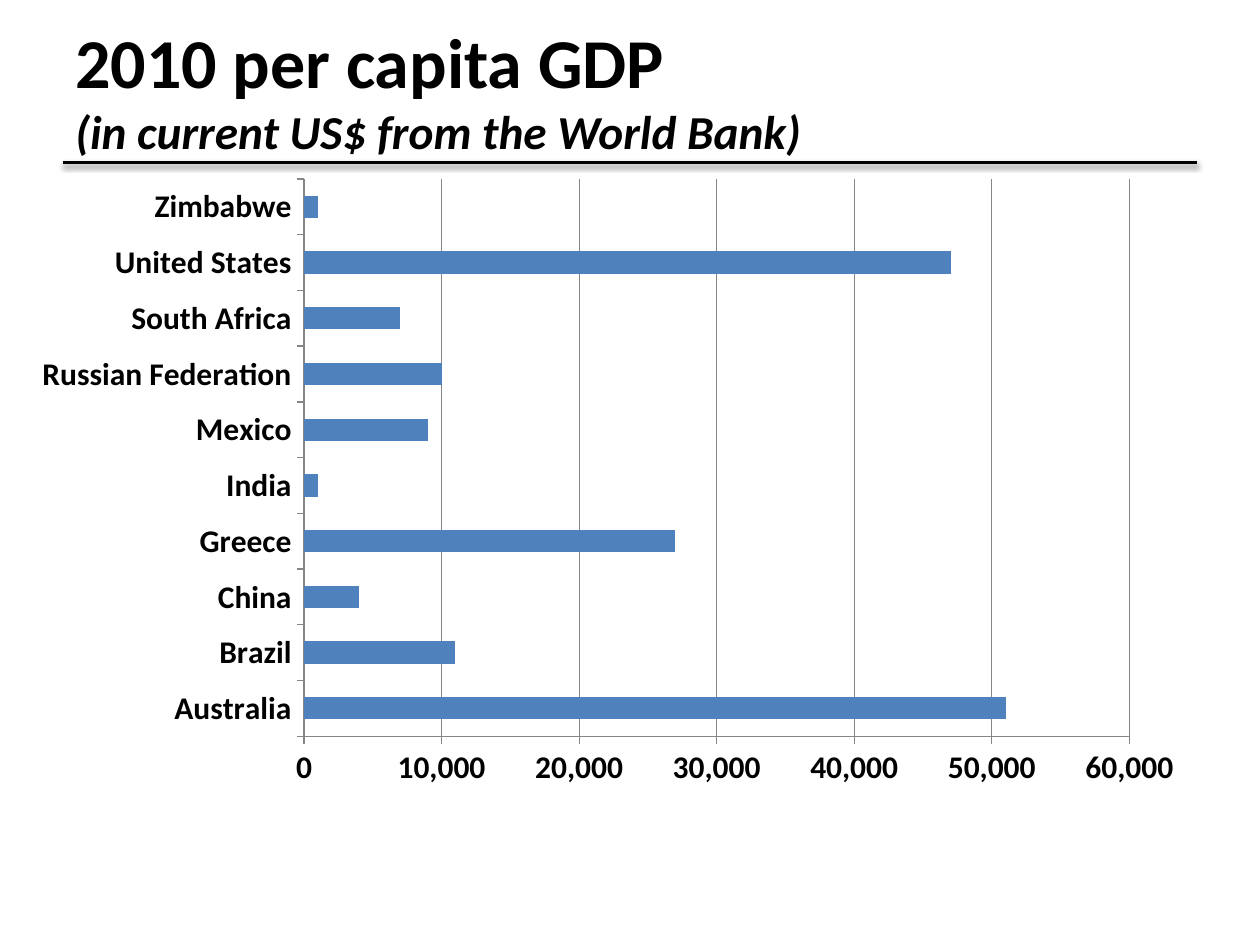
from typing import NamedTuple

from lxml import etree
from pptx import Presentation
from pptx.chart.data import CategoryChartData
from pptx.dml.color import RGBColor
from pptx.enum.chart import XL_CHART_TYPE, XL_TICK_MARK
from pptx.enum.shapes import MSO_CONNECTOR
from pptx.enum.text import MSO_ANCHOR
from pptx.oxml import parse_xml
from pptx.oxml.ns import nsdecls
from pptx.util import Inches, Pt

BAR_CLUSTERED = XL_CHART_TYPE.BAR_CLUSTERED
TICK_OUTSIDE = XL_TICK_MARK.OUTSIDE
STRAIGHT = MSO_CONNECTOR.STRAIGHT
MIDDLE = MSO_ANCHOR.MIDDLE

WIDTH, HEIGHT = Inches(10), Inches(7.5)
MARGIN = 0.05  # share of the slide's width
FONT = "Calibri"
BLACK, BAR_BLUE, AXIS_GRAY = "000000", "4F81BD", "868686"


class Country(NamedTuple):
    name: str
    gdp_per_capita: int


class TitleLine(NamedTuple):
    text: str
    size: float
    italic: bool


COUNTRIES = [
    Country("Australia", 51000),
    Country("Brazil", 11000),
    Country("China", 4000),
    Country("Greece", 27000),
    Country("India", 1000),
    Country("Mexico", 9000),
    Country("Russian Federation", 10000),
    Country("South Africa", 7000),
    Country("United States", 47000),
    Country("Zimbabwe", 1000),
]
TITLE_LINES = [
    TitleLine("2010 per capita GDP ", 40, False),
    TitleLine("(in current US$ from the World Bank)", 27, True),
]


def color(hex_code: str) -> RGBColor:
    return RGBColor.from_string(hex_code)


def across(share: float) -> int:
    return round(WIDTH * share)


def down(share: float) -> int:
    return round(HEIGHT * share)


def style_font(font, size: float, italic: bool = False) -> None:
    font.name, font.size = FONT, Pt(size)
    font.bold, font.italic = True, italic
    font.color.rgb = color(BLACK)


def draw_title(slide) -> None:
    title = slide.shapes.add_textbox(
        across(MARGIN), down(0.01), across(1 - 2 * MARGIN), down(0.167))
    frame = title.text_frame
    frame.word_wrap = True
    frame.vertical_anchor = MIDDLE
    frame.text = "\v".join(line.text for line in TITLE_LINES)
    for run, line in zip(frame.paragraphs[0].runs, TITLE_LINES):
        style_font(run.font, line.size, line.italic)


def draw_title_rule(slide) -> None:
    y = down(0.172)
    rule = slide.shapes.add_connector(
        STRAIGHT, across(MARGIN), y, across(1 - MARGIN), y)
    rule.line.color.rgb = color(BLACK)
    rule.line.width = Pt(2)
    # Soft shadow falling straight down
    effects = parse_xml(
        f'<a:effectLst {nsdecls("a")}>'
        f'<a:outerShdw blurRad="{Pt(3.1)}" dist="{Pt(1.6)}" dir="5400000" rotWithShape="0">'
        f'<a:srgbClr val="{BLACK}"><a:alpha val="38000"/></a:srgbClr>'
        '</a:outerShdw></a:effectLst>')
    etree.ElementBase.append(rule._element.spPr, effects)


def style_axis(axis) -> None:
    axis.major_tick_mark = TICK_OUTSIDE
    axis.format.line.color.rgb = color(AXIS_GRAY)
    axis.format.line.width = Pt(0.75)


def draw_gdp_chart(slide) -> None:
    data = CategoryChartData()
    data.categories = [country.name for country in COUNTRIES]
    data.add_series("Series 1", [country.gdp_per_capita for country in COUNTRIES])
    chart = slide.shapes.add_chart(
        BAR_CLUSTERED, across(0.015), down(0.176), across(0.935), down(0.67), data).chart
    chart.has_legend = chart.has_title = False
    style_font(chart.font, 18)

    # Bars
    plot = chart.plots[0]
    plot.gap_width = 150
    plot.vary_by_categories = False
    fill = plot.series[0].format.fill
    fill.solid()
    fill.fore_color.rgb = color(BAR_BLUE)

    # Axes and gridlines
    style_axis(chart.category_axis)
    dollars = chart.value_axis
    style_axis(dollars)
    dollars.minimum_scale, dollars.maximum_scale = 0, 60000
    dollars.major_unit = 10000
    dollars.tick_labels.number_format = "#,##0"
    dollars.tick_labels.number_format_is_linked = False
    dollars.has_major_gridlines = True
    gridline = dollars.major_gridlines.format.line
    gridline.color.rgb = color(AXIS_GRAY)
    gridline.width = Pt(0.75)


def main() -> None:
    deck = Presentation()
    deck.slide_width, deck.slide_height = WIDTH, HEIGHT
    slide = deck.slides.add_slide(deck.slide_layouts[6])
    draw_title_rule(slide)
    draw_title(slide)
    draw_gdp_chart(slide)
    deck.save("out.pptx")


if __name__ == "__main__":
    main()
